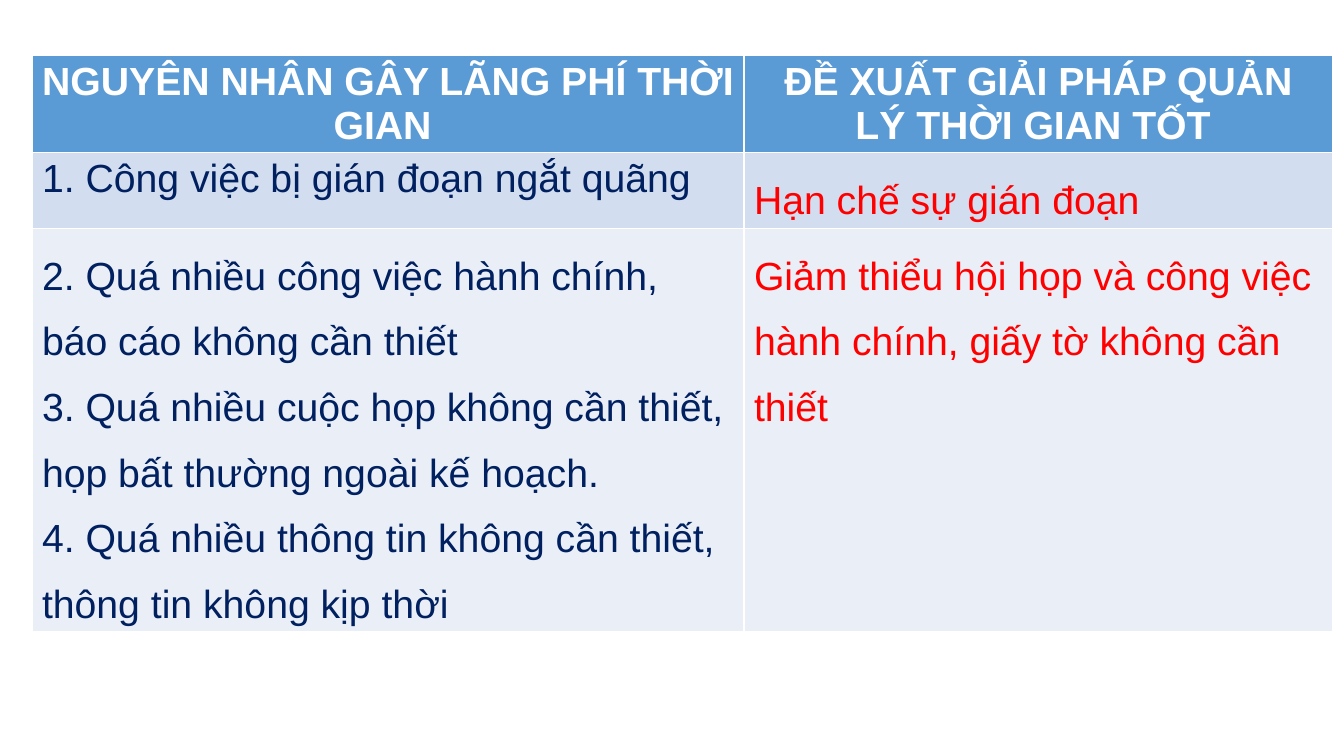
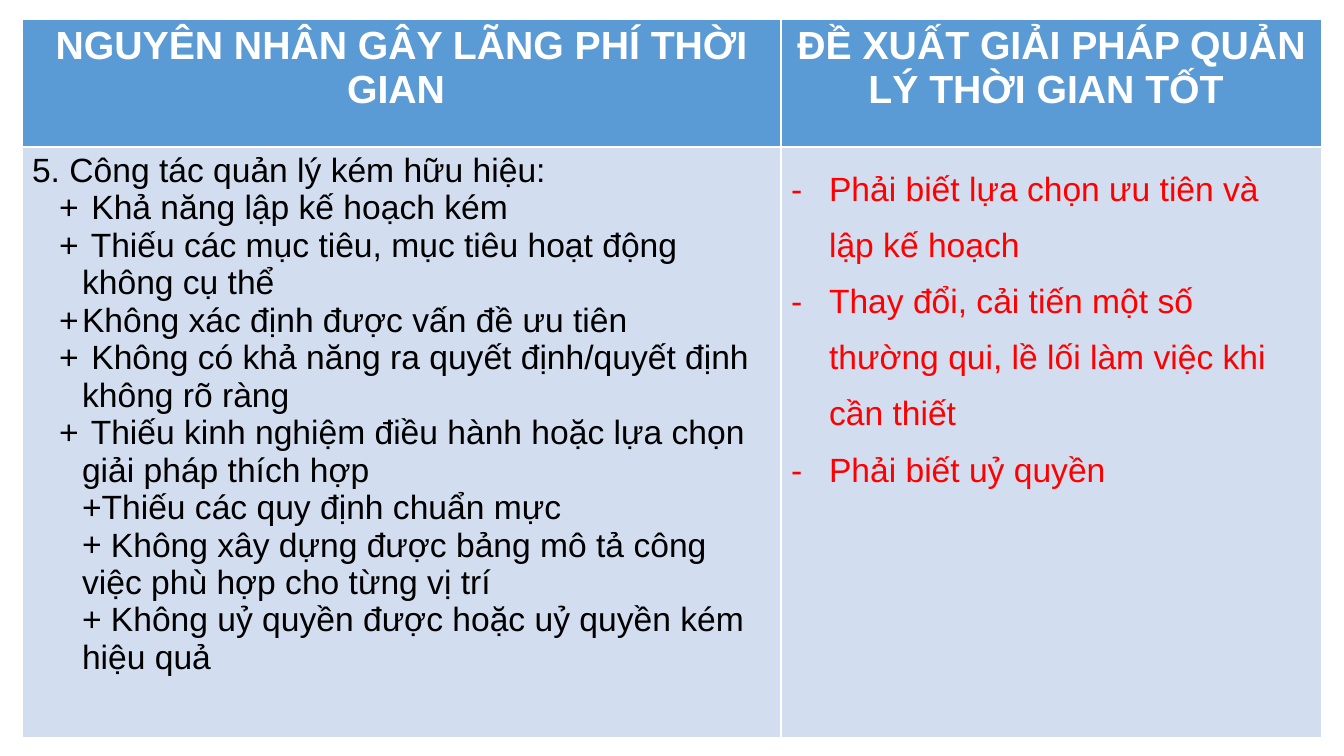
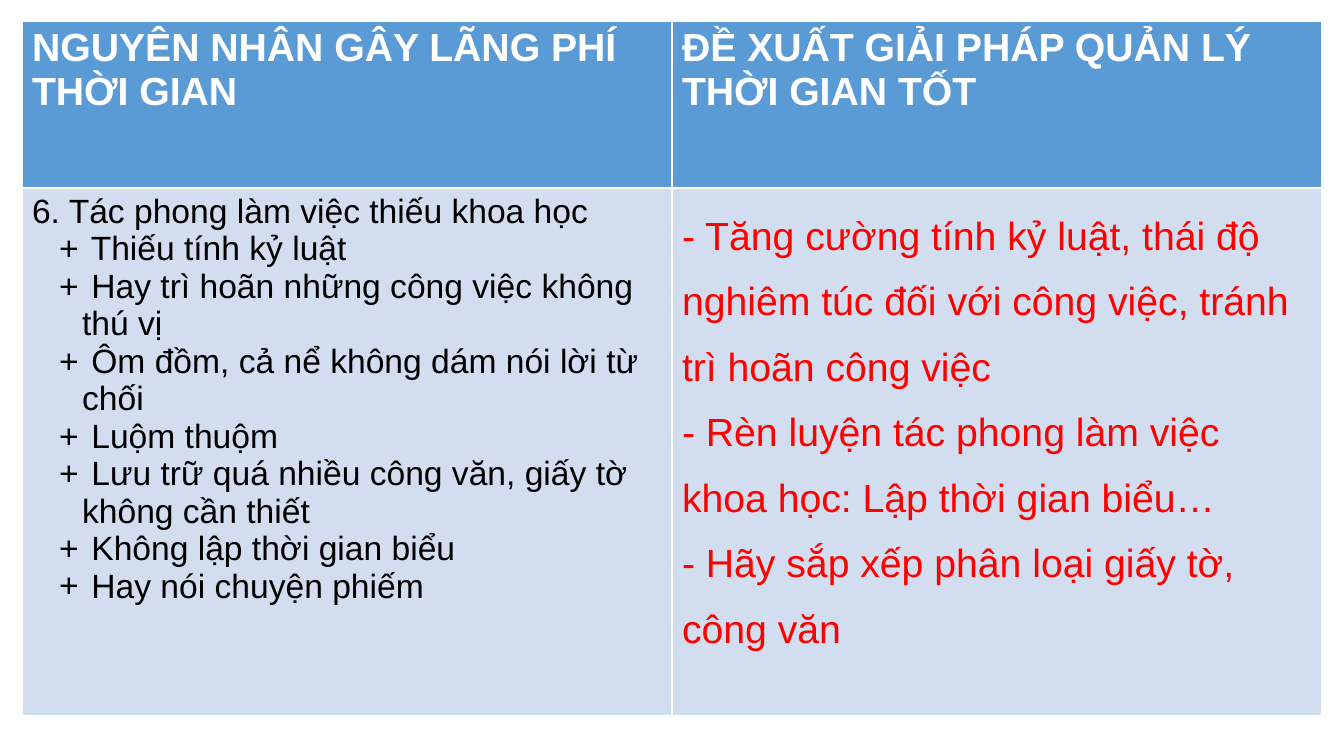
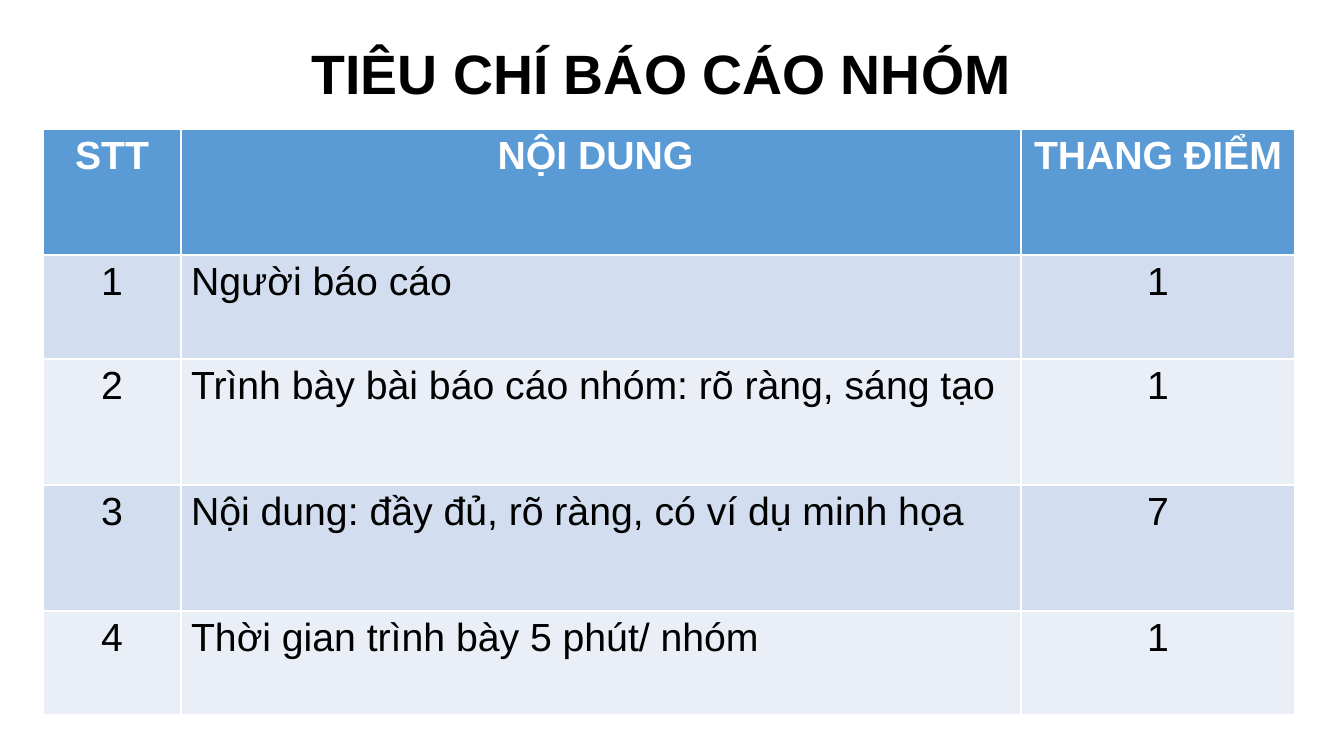
from lxml import etree
from pptx import Presentation
from pptx.dml.color import RGBColor
from pptx.enum.text import MSO_ANCHOR, PP_ALIGN
from pptx.oxml.ns import qn
from pptx.util import Pt

CENTER, LEFT = PP_ALIGN.CENTER, PP_ALIGN.LEFT
MIDDLE = MSO_ANCHOR.MIDDLE
PX = 914400 / 100.8
FONT = "Arial"
WHITE, BLACK, NAVY, RED = "FFFFFF", "000000", "002060", "FF0000"
HEADER_BLUE = "5B9BD5"
BANDS = ("D2DEEF", "EAEFF7")
rgb = RGBColor.from_string


def px(value):
    return round(value * PX)


def write(frame, text, size=28, color=BLACK, bold=False, align=LEFT, spacing=None,
          bullet=None, margin=0, indent=0):
    first = frame.paragraphs[0]
    paragraph = frame.add_paragraph() if first.runs else first
    paragraph.alignment = align
    if spacing:
        paragraph.line_spacing = spacing
    run = paragraph.add_run()
    run.text = text
    run.font.name = FONT
    run.font.size = Pt(size)
    run.font.bold = bold
    run.font.color.rgb = rgb(color)
    if bullet:
        properties = paragraph._p.get_or_add_pPr()
        properties.set("marL", str(px(margin)))
        properties.set("indent", str(px(indent)))
        etree.SubElement(properties, qn("a:buFont")).set("typeface", FONT)
        etree.SubElement(properties, qn("a:buChar")).set("char", bullet)


heading = dict(color=WHITE, bold=True)
centered_heading = dict(heading, align=CENTER)
cause = dict(color=NAVY)
spaced_cause = dict(cause, spacing=1.5)
solution = dict(color=RED, spacing=1.5)
dashed_solution = dict(solution, size=24, bullet="-", margin=38, indent=-38)
topic = dict(size=24)
hanging_detail = dict(topic, bullet="+", margin=50, indent=-23)
flush_detail = dict(hanging_detail, indent=0)
centered = dict(align=CENTER)

CAUSES = "NGUYÊN NHÂN GÂY LÃNG PHÍ THỜI GIAN "
SOLUTIONS = "ĐỀ XUẤT GIẢI PHÁP QUẢN LÝ THỜI GIAN TỐT "

interruptions = [
    [[(CAUSES, centered_heading)], [(SOLUTIONS, centered_heading)]],
    [[("1. Công việc bị gián đoạn ngắt quãng", cause)],
     [("Hạn chế sự gián đoạn", solution)]],
    [[("2. Quá nhiều công việc hành chính, báo cáo không cần thiết ", spaced_cause),
      ("3. Quá nhiều cuộc họp không cần thiết, họp bất thường ngoài kế hoạch.", spaced_cause),
      ("4. Quá nhiều thông tin không cần thiết, thông tin không kịp thời", spaced_cause)],
     [("Giảm thiểu hội họp và công việc hành chính, giấy tờ không cần thiết", solution)]],
]

management = [
    [[(CAUSES, centered_heading)], [(SOLUTIONS, centered_heading)]],
    [[("5. Công tác quản lý kém hữu hiệu:", topic),
      (" Khả năng lập kế hoạch kém", hanging_detail),
      (" Thiếu các mục tiêu, mục tiêu hoạt động không cụ thể", hanging_detail),
      ("Không xác định được vấn đề ưu tiên", hanging_detail),
      (" Không có khả năng ra quyết định/quyết định không rõ ràng", hanging_detail),
      (" Thiếu kinh nghiệm điều hành hoặc lựa chọn giải pháp thích hợp", hanging_detail),
      ("Thiếu các quy định chuẩn mực", flush_detail),
      (" Không xây dựng được bảng mô tả công việc phù hợp cho từng vị trí", flush_detail),
      (" Không uỷ quyền được hoặc uỷ quyền kém hiệu quả", flush_detail)],
     [("Phải biết lựa chọn ưu tiên và lập kế hoạch", dashed_solution),
      ("Thay đổi, cải tiến một số thường qui, lề lối làm việc khi cần thiết", dashed_solution),
      ("Phải biết uỷ quyền", dashed_solution)]],
]

work_style = [
    [[(CAUSES, heading)], [(SOLUTIONS, heading)]],
    [[("6. Tác phong làm việc thiếu khoa học", topic),
      (" Thiếu tính kỷ luật", hanging_detail),
      (" Hay trì hoãn những công việc không thú vị", hanging_detail),
      (" Ôm đồm, cả nể không dám nói lời từ chối", hanging_detail),
      (" Luộm thuộm", hanging_detail),
      (" Lưu trữ quá nhiều công văn, giấy tờ không cần thiết", hanging_detail),
      (" Không lập thời gian biểu", hanging_detail),
      (" Hay nói chuyện phiếm", hanging_detail)],
     [("- Tăng cường tính kỷ luật, thái độ nghiêm túc đối với công việc, "
       "tránh trì hoãn công việc", solution),
      ("- Rèn luyện tác phong làm việc khoa học: Lập thời gian biểu…", solution),
      ("- Hãy sắp xếp phân loại giấy tờ, công văn", solution)]],
]

criteria = [[[(label, centered_heading)] for label in ("STT", "NỘI DUNG ", "THANG ĐIỂM ")]]
for number, (criterion, points) in enumerate([
    ("Người báo cáo ", 1),
    ("Trình bày bài báo cáo nhóm: rõ ràng, sáng tạo", 1),
    ("Nội dung: đầy đủ, rõ ràng, có ví dụ minh họa", 7),
    ("Thời gian trình bày 5 phút/ nhóm ", 1),
], start=1):
    criteria.append([[(str(number), centered)], [(criterion, {})], [(str(points), centered)]])

pages = [
    (None, 32, 55, (712, 589), (97, 75, 403), interruptions),
    (None, 22, 19, (759, 541), (128, 591), management),
    (None, 22, 21, (650, 650), (167, 528), work_style),
    ("TIÊU CHÍ BÁO CÁO NHÓM ", 43, 129, (138, 840, 274), (126, 104, 126, 126, 104), criteria),
]

deck = Presentation()
deck.slide_width, deck.slide_height = px(1344), px(756)

for title, left, top, widths, heights, rows in pages:
    slide = deck.slides.add_slide(deck.slide_layouts[6])
    if title:
        title_frame = slide.shapes.add_textbox(px(187), px(39), px(964), px(74)).text_frame
        title_frame.word_wrap = True
        title_frame.vertical_anchor = MIDDLE
        write(title_frame, title, size=39.6, bold=True, align=CENTER, spacing=0.9)
    table = slide.shapes.add_table(len(heights), len(widths), px(left), px(top),
                                   px(sum(widths)), px(sum(heights))).table
    for column, width in zip(table.columns, widths):
        column.width = px(width)
    for row_index, (row, height, contents) in enumerate(zip(table.rows, heights, rows)):
        row.height = px(height)
        for cell, paragraphs in zip(row.cells, contents):
            cell.fill.solid()
            cell.fill.fore_color.rgb = rgb(BANDS[(row_index - 1) % 2] if row_index else HEADER_BLUE)
            for text, style in paragraphs:
                write(cell.text_frame, text, **style)

deck.save("out.pptx")
